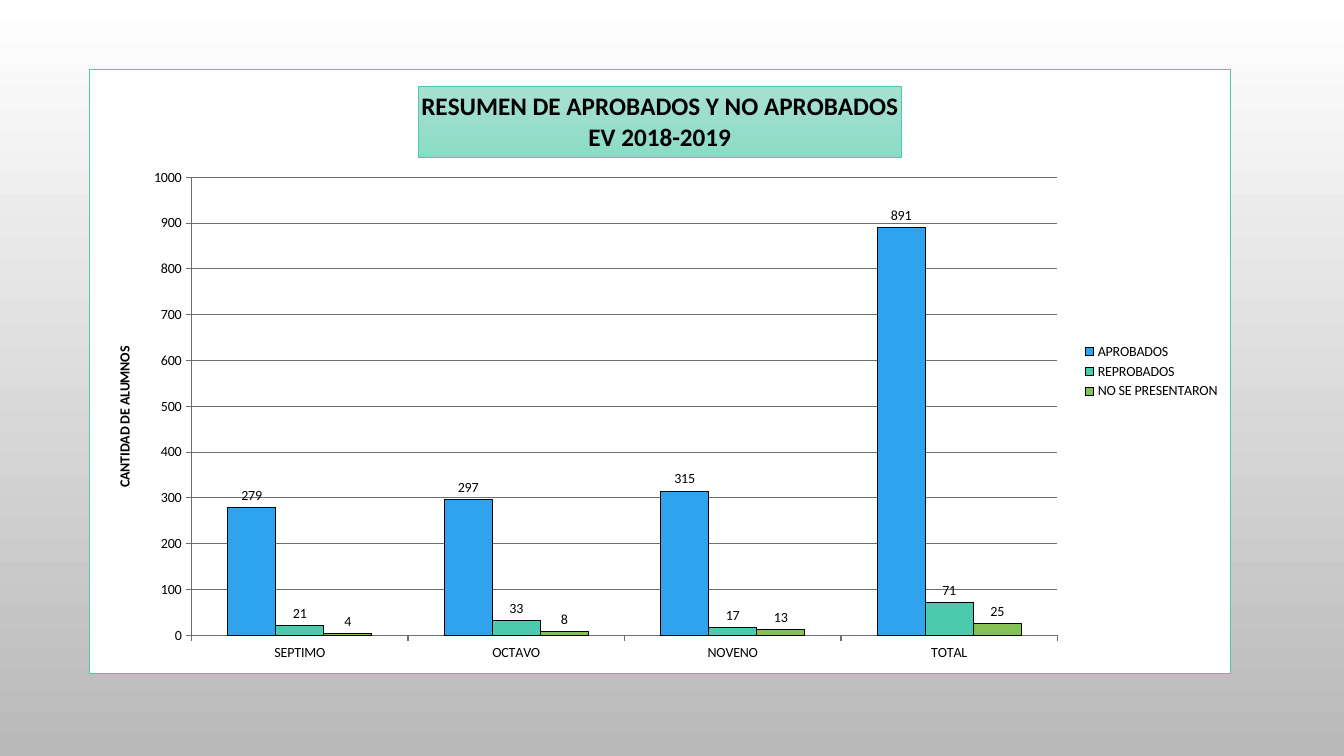
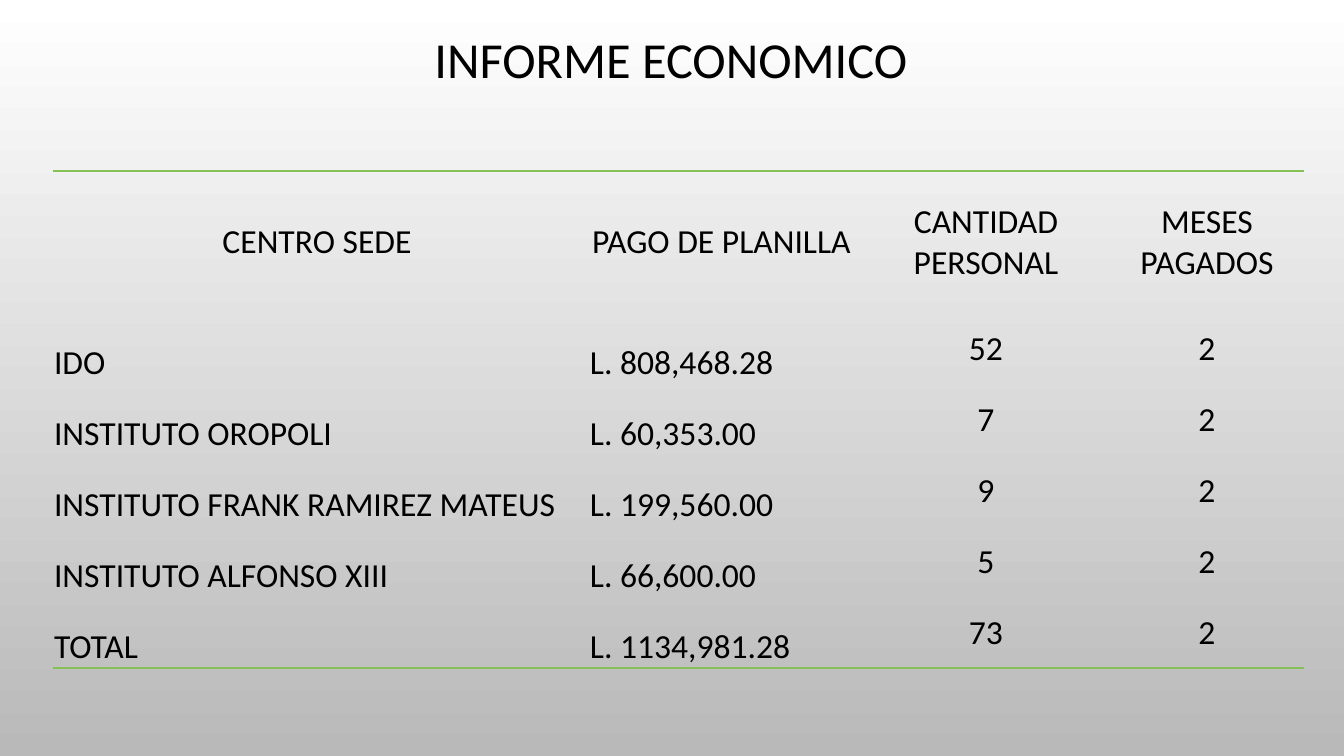
from dataclasses import dataclass

from lxml import etree
from pptx import Presentation
from pptx import util as u
from pptx.chart.data import CategoryChartData
from pptx.dml.color import RGBColor
from pptx.enum import chart as charts, text
from pptx.oxml import parse_xml
from pptx.oxml.ns import nsdecls, qn

SLIDE_W, SLIDE_H = 1344, 756
SCALE = u.Inches(13.33333) / SLIDE_W
NO_STYLE = "{2D5ABB26-0587-4C30-8999-92F81FD0307C}"


@dataclass(frozen=True)
class Theme:
    font: str = "Calibri"
    ink: RGBColor = RGBColor(0x00, 0x00, 0x00)
    paper: RGBColor = RGBColor(0xFF, 0xFF, 0xFF)
    shade: RGBColor = RGBColor(0xB9, 0xB9, 0xB9)
    grid: RGBColor = RGBColor(0x6E, 0x6E, 0x6E)
    blue: RGBColor = RGBColor(0x2F, 0xA3, 0xEE)
    teal: RGBColor = RGBColor(0x4B, 0xCA, 0xAD)
    teal_light: RGBColor = RGBColor(0xA8, 0xE0, 0xD0)
    teal_mid: RGBColor = RGBColor(0x8B, 0xDC, 0xC6)
    green: RGBColor = RGBColor(0x86, 0xC1, 0x57)
    title_size: int = 36
    table_size: int = 24
    chart_title_size: int = 18
    chart_size: int = 10


THEME = Theme()


@dataclass(frozen=True)
class Box:
    x: int
    y: int
    w: int
    h: int

    def emu(self) -> tuple[int, ...]:
        return tuple(px(n) for n in (self.x, self.y, self.w, self.h))


@dataclass(frozen=True)
class Series:
    name: str
    values: tuple[int, ...]
    color: RGBColor


@dataclass(frozen=True)
class Column:
    header: str
    width: int
    align: text.PP_ALIGN
    anchor: text.MSO_ANCHOR
    inset: int = 1


# Slide 1 content
CHART = Box(89, 69, 1142, 605)
PLOT = Box(191, 177, 867, 459)
CHART_TITLE = Box(418, 86, 483, 71)
AXIS_TITLE = Box(112, 344, 14, 142)
GRADES = ("SEPTIMO", "OCTAVO", "NOVENO", "TOTAL")
RESULTS = (
    Series("APROBADOS", (279, 297, 315, 891), THEME.blue),
    Series("REPROBADOS", (21, 33, 17, 71), THEME.teal),
    Series("NO SE PRESENTARON", (4, 8, 13, 25), THEME.green),
)

# Slide 2 content
TITLE = Box(100, 23, 1142, 79)
TABLE_X, TABLE_Y, HEADER_H, ROW_H = 53, 171, 142, 71
LEFT, CENTER = text.PP_ALIGN.LEFT, text.PP_ALIGN.CENTER
MIDDLE, BOTTOM = text.MSO_ANCHOR.MIDDLE, text.MSO_ANCHOR.BOTTOM
COLUMNS = (
    Column("CENTRO SEDE", 528, LEFT, BOTTOM),
    Column("PAGO DE PLANILLA", 281, LEFT, BOTTOM, inset=9),
    Column("CANTIDAD PERSONAL", 248, CENTER, MIDDLE),
    Column("MESES PAGADOS", 194, CENTER, MIDDLE),
)
PAYROLL = (
    ("IDO", "L. 808,468.28", "52", "2"),
    ("INSTITUTO OROPOLI", "L. 60,353.00", "7", "2"),
    ("INSTITUTO FRANK RAMIREZ MATEUS", "L. 199,560.00", "9", "2"),
    ("INSTITUTO ALFONSO XIII", "L. 66,600.00", "5", "2"),
    ("TOTAL", "L. 1134,981.28", "73", "2"),
)


# Shared helpers
def px(n: int) -> u.Emu:
    return u.Emu(round(n * SCALE))


def style_font(font, size: int, bold: bool = False) -> None:
    font.name, font.size, font.bold = THEME.font, u.Pt(size), bold
    font.color.rgb = THEME.ink


def fill_down(fill, top: RGBColor, bottom: RGBColor) -> None:
    """Vertical gradient from top to bottom."""
    fill.gradient()
    fill.gradient_angle = 270
    for stop, color in zip(fill.gradient_stops, (top, bottom)):
        stop.color.rgb = color


def style_line(line, color: RGBColor, width: float = 0.75) -> None:
    line.color.rgb = color
    line.width = u.Pt(width)


def solid(color: RGBColor) -> str:
    return f'<a:solidFill><a:srgbClr val="{color}"/></a:solidFill>'


# Chart parts
def place(element, box: Box, plot: bool = False) -> None:
    """Fix the place of a chart part as fractions of the chart."""
    for old in element.findall(qn("c:layout")):
        element.remove(old)
    layout = parse_xml(f'<c:layout {nsdecls("c")}><c:manualLayout/></c:layout>')
    settings = {"xMode": "edge", "yMode": "edge",
                "x": (box.x - CHART.x) / CHART.w, "y": (box.y - CHART.y) / CHART.h}
    if plot:
        settings = {"layoutTarget": "inner"} | settings
        settings |= {"w": box.w / CHART.w, "h": box.h / CHART.h}
    for tag, value in settings.items():
        etree.SubElement(layout[0], qn(f"c:{tag}")).set("val", str(value))
    tx = element.find(qn("c:tx"))
    if tx is None:
        element.insert(0, layout)
    else:
        tx.addnext(layout)


def write_chart_title(title, wording: str, size: int, box: Box) -> None:
    title.text_frame.text = wording
    for p in title.text_frame.paragraphs:
        style_font(p.font, size, bold=True)
    place(title.format.element if hasattr(title.format, "element") else title.element, box)


def frame_chart(chart) -> None:
    chart.element.find(qn("c:chart")).addnext(parse_xml(
        f'<c:spPr {nsdecls("c", "a")}>{solid(THEME.paper)}'
        f'<a:ln w="{u.Pt(1)}">{solid(THEME.teal)}</a:ln></c:spPr>'))


def style_axes(chart) -> None:
    for axis in (chart.category_axis, chart.value_axis):
        axis.major_tick_mark = charts.XL_TICK_MARK.OUTSIDE
        axis.minor_tick_mark = charts.XL_TICK_MARK.NONE
        style_line(axis.format.line, THEME.grid)
    axis = chart.value_axis
    axis.minimum_scale, axis.maximum_scale, axis.major_unit = 0, 1000, 100
    axis.tick_labels.number_format = "0"
    axis.tick_labels.number_format_is_linked = False
    axis.has_major_gridlines = True
    style_line(axis.major_gridlines.format.line, THEME.grid)
    write_chart_title(axis.axis_title, "CANTIDAD DE ALUMNOS", THEME.chart_size, AXIS_TITLE)


def style_columns(plot) -> None:
    plot.gap_width, plot.overlap = 150, 0
    plot.vary_by_categories = False
    for column, result in zip(plot.series, RESULTS):
        column.format.fill.solid()
        column.format.fill.fore_color.rgb = result.color
        style_line(column.format.line, THEME.ink)
    plot.has_data_labels = True
    labels = plot.data_labels
    labels.show_value = True
    labels.number_format, labels.number_format_is_linked = "0", False
    labels.position = charts.XL_LABEL_POSITION.OUTSIDE_END
    style_font(labels.font, THEME.chart_size)


def add_results_chart(s) -> None:
    data = CategoryChartData(number_format="0")
    data.categories = GRADES
    for result in RESULTS:
        data.add_series(result.name, result.values)
    chart = s.shapes.add_chart(
        charts.XL_CHART_TYPE.COLUMN_CLUSTERED, *CHART.emu(), data).chart
    style_font(chart.font, THEME.chart_size)
    frame_chart(chart)
    style_axes(chart)
    style_columns(chart.plots[0])
    place(chart.element.find(".//" + qn("c:plotArea")), PLOT, plot=True)

    chart.has_title = True
    title = chart.chart_title
    write_chart_title(title, "RESUMEN DE APROBADOS Y NO APROBADOS\nEV 2018-2019",
                      THEME.chart_title_size, CHART_TITLE)
    fill_down(title.format.fill, THEME.teal_light, THEME.teal_mid)
    style_line(title.format.line, THEME.teal)

    chart.has_legend = True
    chart.legend.position = charts.XL_LEGEND_POSITION.RIGHT
    chart.legend.include_in_layout = False
    style_font(chart.legend.font, THEME.chart_size)


# Title and table parts
def write_title(s, wording: str) -> None:
    sp = s.shapes.title
    sp.left, sp.top, sp.width, sp.height = TITLE.emu()
    tf = sp.text_frame
    tf.text, tf.vertical_anchor = wording, MIDDLE
    p = tf.paragraphs[0]
    p.alignment, p.line_spacing = CENTER, 0.9
    style_font(p.font, THEME.title_size)


def rule_cell(cell, side: str) -> None:
    cell._tc.get_or_add_tcPr().insert(0, parse_xml(
        f'<a:ln{side} {nsdecls("a")} w="{u.Pt(1)}">{solid(THEME.green)}</a:ln{side}>'))


def write_cell(cell, wording: str, align: text.PP_ALIGN,
               anchor: text.MSO_ANCHOR, inset: int = 1) -> None:
    cell.fill.background()
    cell.margin_left, cell.margin_right = px(inset), px(1)
    cell.margin_top, cell.margin_bottom = px(1), 0
    cell.vertical_anchor = anchor
    cell.text = wording
    p = cell.text_frame.paragraphs[0]
    p.alignment = align
    style_font(p.font, THEME.table_size)


def add_payroll_table(s) -> None:
    box = Box(TABLE_X, TABLE_Y, sum(c.width for c in COLUMNS),
              HEADER_H + ROW_H * len(PAYROLL))
    frame = s.shapes.add_table(len(PAYROLL) + 1, len(COLUMNS), *box.emu())
    table = frame.table
    table.first_row = table.horz_banding = False
    for style in frame.element.iter(qn("a:tableStyleId")):
        style.text = NO_STYLE
    for i, row in enumerate(table.rows):
        row.height = px(ROW_H if i else HEADER_H)
    for j, column in enumerate(COLUMNS):
        table.columns[j].width = px(column.width)
        write_cell(table.cell(0, j), column.header, CENTER, MIDDLE)
        for i, record in enumerate(PAYROLL, start=1):
            write_cell(table.cell(i, j), record[j], column.align,
                       column.anchor, column.inset)
        rule_cell(table.cell(0, j), "T")
        rule_cell(table.cell(len(PAYROLL), j), "B")


def main() -> None:
    prs = Presentation()
    prs.slide_width, prs.slide_height = px(SLIDE_W), px(SLIDE_H)
    fill_down(prs.slide_master.background.fill, THEME.paper, THEME.shade)
    title_only, blank = prs.slide_layouts[5], prs.slide_layouts[6]

    # Slide 1: results chart
    add_results_chart(prs.slides.add_slide(blank))

    # Slide 2: payroll table
    s = prs.slides.add_slide(title_only)
    write_title(s, "INFORME ECONOMICO")
    add_payroll_table(s)

    prs.save("out.pptx")


if __name__ == "__main__":
    main()
